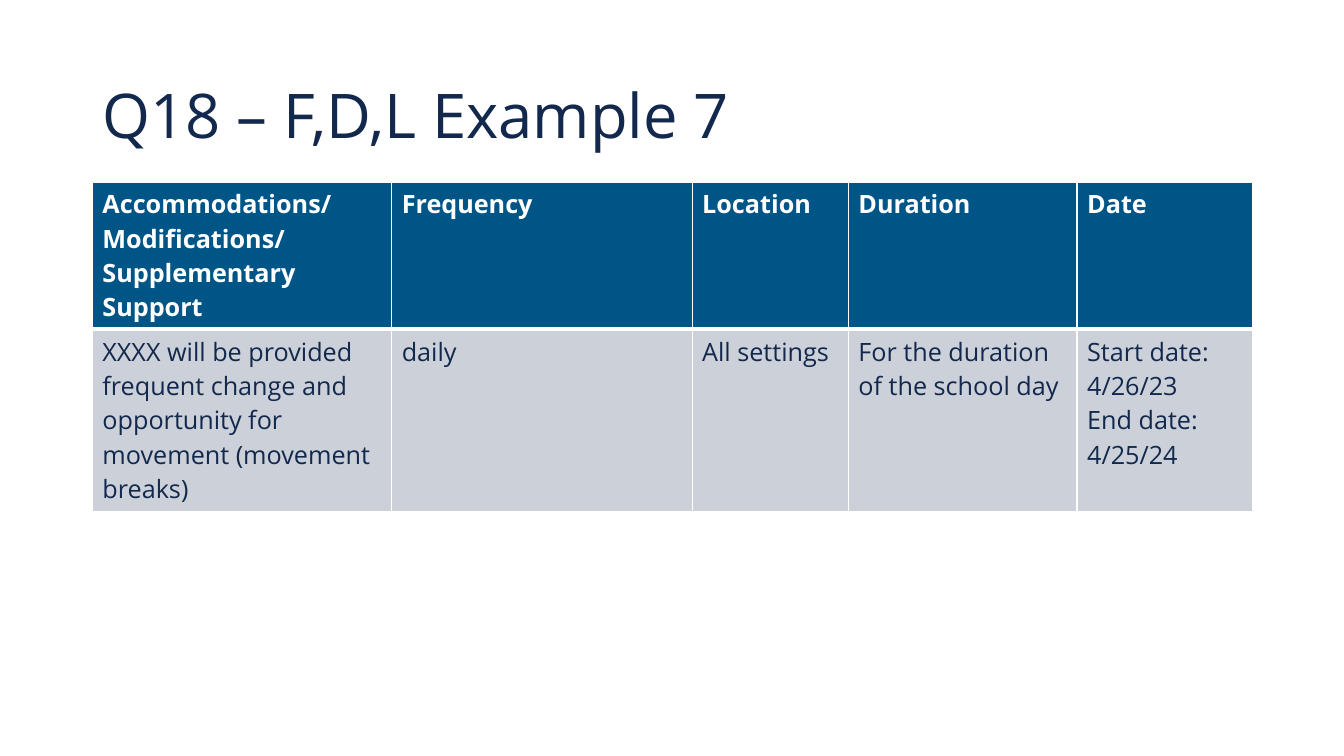
import dataclasses

import lxml.etree
import pptx
import pptx.dml.color
import pptx.enum.text
import pptx.oxml.ns
import pptx.util

Pt = pptx.util.Pt
FONT = "Open Sans"
NAVY, BLUE, GREY, WHITE = "12284C", "005587", "CCD1D9", "FFFFFF"
LEFT, WIDTH = 66, 828


@dataclasses.dataclass
class Column:
    heading: str
    entry: str
    width: float


@dataclasses.dataclass
class RowStyle:
    height: float
    fill: str
    color: str
    bold: bool
    bottom: float


COLUMNS = [
    Column("Accommodations/Modifications/Supplementary Support",
           "XXXX will be provided frequent change and opportunity for "
           "movement (movement breaks)", 213.8),
    Column("Frequency", "daily", 214.6),
    Column("Location", "All settings", 111.6),
    Column("Duration", "For the duration of the school day", 163.4),
    Column("Date", "Start date: 4/26/23\nEnd date: 4/25/24", 125.3),
]
ROWS = [
    RowStyle(105, BLUE, WHITE, True, 3),
    RowStyle(130, GREY, NAVY, False, 1),
]


def rgb(value: str) -> pptx.dml.color.RGBColor:
    return pptx.dml.color.RGBColor.from_string(value)


def write(tf, text: str, *, size: float, color: str, bold: bool = False) -> None:
    tf.text = text
    for p in tf.paragraphs:
        p.alignment = pptx.enum.text.PP_ALIGN.LEFT
        for r in p.runs:
            r.font.name = FONT
            r.font.size = Pt(size)
            r.font.bold = bold
            r.font.color.rgb = rgb(color)


def add_borders(cell, widths: dict[str, float], color: str) -> None:
    qn = pptx.oxml.ns.qn
    tc_pr = cell._tc.get_or_add_tcPr()
    for i, (side, width) in enumerate(widths.items()):
        ln = lxml.etree.Element(qn(f"a:{side}"), w=str(Pt(width)))
        fill = lxml.etree.SubElement(ln, qn("a:solidFill"))
        lxml.etree.SubElement(fill, qn("a:srgbClr"), val=color)
        tc_pr.insert(i, ln)


def add_title(s, text: str) -> None:
    sp = s.shapes.title
    sp.left, sp.top, sp.width, sp.height = Pt(LEFT), Pt(29), Pt(WIDTH), Pt(104)
    sp.text_frame.vertical_anchor = pptx.enum.text.MSO_ANCHOR.MIDDLE
    write(sp.text_frame, text, size=44, color=NAVY)


def add_support_table(s) -> None:
    height = sum(row.height for row in ROWS)
    table = s.shapes.add_table(len(ROWS), len(COLUMNS), Pt(LEFT), Pt(130),
                               Pt(WIDTH), Pt(height)).table
    for j, column in enumerate(COLUMNS):
        table.columns[j].width = Pt(column.width)
        for i, (row, text) in enumerate(zip(ROWS, (column.heading, column.entry))):
            table.rows[i].height = Pt(row.height)
            cell = table.cell(i, j)
            cell.fill.solid()
            cell.fill.fore_color.rgb = rgb(row.fill)
            write(cell.text_frame, text, size=18, color=row.color, bold=row.bold)
            top = ROWS[i - 1].bottom if i else 1
            add_borders(cell, {"lnL": 1, "lnR": 1, "lnT": top, "lnB": row.bottom}, WHITE)


def main() -> None:
    prs = pptx.Presentation()
    prs.slide_width, prs.slide_height = Pt(960), Pt(540)
    s = prs.slides.add_slide(prs.slide_layouts[5])
    add_support_table(s)
    add_title(s, "Q18 – F,D,L Example 7")
    prs.save("out.pptx")


if __name__ == "__main__":
    main()
